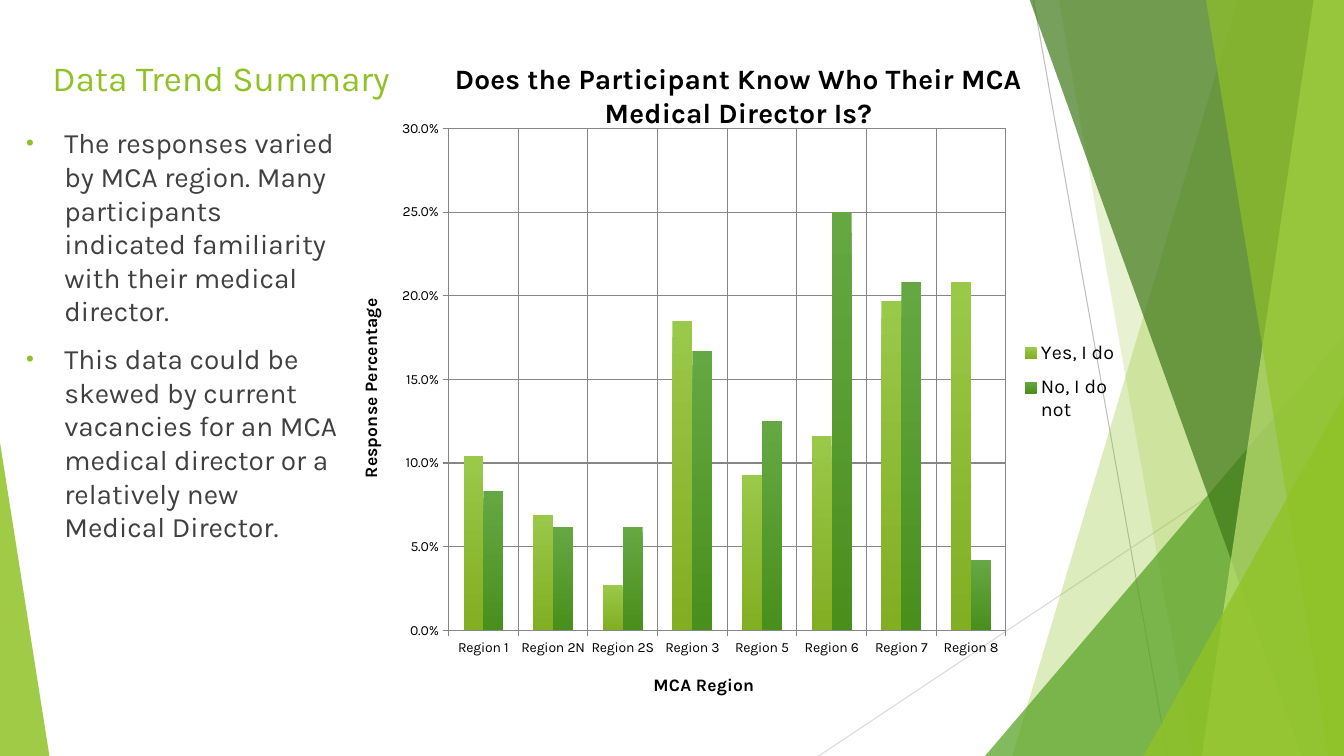
from dataclasses import dataclass

from lxml.etree import SubElement
from pptx import Presentation
from pptx.chart.data import CategoryChartData
from pptx.dml.color import RGBColor
from pptx.enum.chart import XL_CHART_TYPE, XL_LEGEND_POSITION, XL_TICK_MARK
from pptx.enum.shapes import MSO_CONNECTOR, MSO_SHAPE
from pptx.enum.text import MSO_ANCHOR
from pptx.oxml import parse_xml
from pptx.oxml.ns import nsdecls, qn
from pptx.util import Emu, Pt

PX = 9144  # 100 px to the inch
WIDE, HIGH = 1333, 750
FONT = "Karla"
LIME, GREEN, GREY = "90C226", "54A021", "868686"


@dataclass
class Ray:
    x1: int
    y1: int
    x2: int
    y2: int
    tint: str


@dataclass
class Pane:
    """A sheet that runs from a slanted left edge to the slide's right edge."""
    top: int
    foot: int
    tint: str
    alpha: int


@dataclass
class Wedge:
    left: int
    top: int
    wide: int
    high: int
    apex: int
    tint: str
    alpha: int


@dataclass
class Series:
    name: str
    vals: tuple[float, ...]
    light: str
    dark: str


RAYS = [Ray(1025, 0, 1158, 750, "BFBFBF"), Ray(1333, 403, 812, 750, "D9D9D9")]
SHARDS = [
    Pane(1228, 1004, LIME, 30),
    Pane(1050, 1183, LIME, 20),
    Wedge(977, 333, 356, 417, 1, GREEN, 72),
    Pane(1021, 1291, "3F7819", 70),
    Pane(1303, 1192, "C0E474", 70),
    Pane(1196, 1318, LIME, 65),
    Wedge(1134, 393, 199, 357, 1, LIME, 80),
    Wedge(0, 439, 49, 311, 0, LIME, 85),
]
CATS = ["Region 1", "Region 2N", "Region 2S", "Region 3",
        "Region 5", "Region 6", "Region 7", "Region 8"]
SERIES = [
    Series("Yes, I do", (0.104, 0.069, 0.027, 0.185, 0.093, 0.116, 0.197, 0.208),
           "9AC849", "82AE22"),
    Series("No, I do not", (0.083, 0.062, 0.062, 0.167, 0.125, 0.25, 0.208, 0.042),
           "65A843", "498F1C"),
]
POINTS = [
    "The responses varied by MCA region. Many participants indicated familiarity "
    "with their medical director.",
    "This data could be skewed by current vacancies for an MCA medical director "
    "or a relatively new Medical Director.",
]


def px(*nums: int) -> list[Emu]:
    return [Emu(num * PX) for num in nums]


def rgb(tint: str) -> RGBColor:
    return RGBColor.from_string(tint)


def style(font, size: float, tint: str, bold: bool = False) -> None:
    font.name, font.size, font.bold = FONT, Pt(size), bold
    font.color.rgb = rgb(tint)


def draw_ray(slide, ray: Ray) -> None:
    line = slide.shapes.add_connector(
        MSO_CONNECTOR.STRAIGHT, *px(ray.x1, ray.y1, ray.x2, ray.y2))
    line.line.color.rgb = rgb(ray.tint)
    line.line.width = Pt(0.75)
    SubElement(line._element.spPr, qn("a:effectLst"))


def draw_shard(slide, shard: Pane | Wedge) -> None:
    if isinstance(shard, Pane):
        path = slide.shapes.build_freeform(shard.top, -1, scale=PX)
        path.add_line_segments([(WIDE, -1), (WIDE, HIGH), (shard.foot, HIGH)])
        shape = path.convert_to_shape()
    else:
        shape = slide.shapes.add_shape(
            MSO_SHAPE.ISOSCELES_TRIANGLE,
            *px(shard.left, shard.top, shard.wide, shard.high))
        shape.adjustments[0] = shard.apex
    shape.shadow.inherit = False
    shape.line.fill.background()
    shape.fill.solid()
    shape.fill.fore_color.rgb = rgb(shard.tint)
    hue = shape._element.spPr.find(f"{qn('a:solidFill')}/{qn('a:srgbClr')}")
    SubElement(hue, qn("a:alpha"), val=str(shard.alpha * 1000))


def add_frame(slide, left: int, top: int, wide: int, high: int):
    frame = slide.shapes.add_textbox(*px(left, top, wide, high)).text_frame
    frame.word_wrap = True
    return frame


def add_head(slide) -> None:
    frame = add_frame(slide, 42, 19, 378, 84)
    frame.vertical_anchor = MSO_ANCHOR.BOTTOM
    frame.text = "Data Trend Summary"
    style(frame.paragraphs[0].runs[0].font, 25.2, LIME)


def add_points(slide) -> None:
    frame = add_frame(slide, 16, 120, 330, 414)
    frame.text = "\n".join(POINTS)
    for para in frame.paragraphs:
        para.space_before = Pt(10)
        style(para.runs[0].font, 20, "404040")
        props = para._p.get_or_add_pPr()
        props.set("marL", str(38 * PX))
        props.set("indent", str(-38 * PX))
        SubElement(SubElement(props, qn("a:buClr")), qn("a:srgbClr"), val=LIME)
        SubElement(props, qn("a:buSzPct"), val="80000")
        SubElement(props, qn("a:buFont"), typeface="Arial")
        SubElement(props, qn("a:buChar"), char="•")


def set_title(owner, text: str, size: float) -> None:
    frame = owner.text_frame
    frame.text = text
    style(frame.paragraphs[0].runs[0].font, size, "000000", True)


def place(x: float, y: float, w: float, h: float, inner: bool = False):
    """Make a manual layout in fractions of the chart."""
    target = '<c:layoutTarget val="inner"/>' if inner else ""
    sizes = "".join(f'<c:{key} val="{val}"/>' for key, val in zip("xywh", (x, y, w, h)))
    return parse_xml(
        f'<c:layout {nsdecls("c")}><c:manualLayout>{target}<c:xMode val="edge"/>'
        f'<c:yMode val="edge"/>{sizes}</c:manualLayout></c:layout>')


def add_graph(slide) -> None:
    data = CategoryChartData(number_format="0.0%")
    data.categories = CATS
    for item in SERIES:
        data.add_series(item.name, item.vals)
    chart = slide.shapes.add_chart(
        XL_CHART_TYPE.COLUMN_CLUSTERED, *px(346, 36, 773, 679), data).chart
    style(chart.font, 10, "000000")
    set_title(chart.chart_title,
              "Does the Participant Know Who Their MCA Medical Director Is?", 20)
    chart.chart_title.include_in_layout = False

    for axis, name in ((chart.category_axis, "MCA Region"),
                       (chart.value_axis, "Response Percentage")):
        set_title(axis.axis_title, name, 12.5)
        axis.has_major_gridlines = True
        axis.major_tick_mark = XL_TICK_MARK.OUTSIDE
        for rule in (axis.format.line, axis.major_gridlines.format.line):
            rule.color.rgb = rgb(GREY)
            rule.width = Pt(0.75)
    scale = chart.value_axis
    scale.minimum_scale, scale.maximum_scale, scale.major_unit = 0, 0.3, 0.05
    scale.tick_labels.number_format = "0.0%"
    scale.tick_labels.number_format_is_linked = False

    plot = chart.plots[0]
    plot.gap_width, plot.overlap = 150, 0
    plot.vary_by_categories = False
    for bars, item in zip(plot.series, SERIES):
        fill = bars.format.fill
        fill.gradient()
        fill.gradient_angle = 270
        for stop, tint in zip(fill.gradient_stops, (item.light, item.dark)):
            stop.color.rgb = rgb(tint)

    chart.has_legend = True
    legend = chart.legend
    legend.position = XL_LEGEND_POSITION.RIGHT
    legend.include_in_layout = False
    style(legend.font, 14, "000000")
    legend._element.find(qn("c:legendPos")).addnext(place(0.86, 0.43, 0.13, 0.15))
    area = chart._chartSpace.chart.plotArea
    for old in area.findall(qn("c:layout")):
        area.remove(old)
    area.insert(0, place(0.128, 0.135, 0.715, 0.733, True))


def main() -> None:
    deck = Presentation()
    deck.slide_width, deck.slide_height = px(WIDE, HIGH)
    slide = deck.slides.add_slide(deck.slide_layouts[6])
    for ray in RAYS:
        draw_ray(slide, ray)
    for shard in SHARDS:
        draw_shard(slide, shard)
    add_head(slide)
    add_graph(slide)
    add_points(slide)
    deck.save("out.pptx")


if __name__ == "__main__":
    main()
